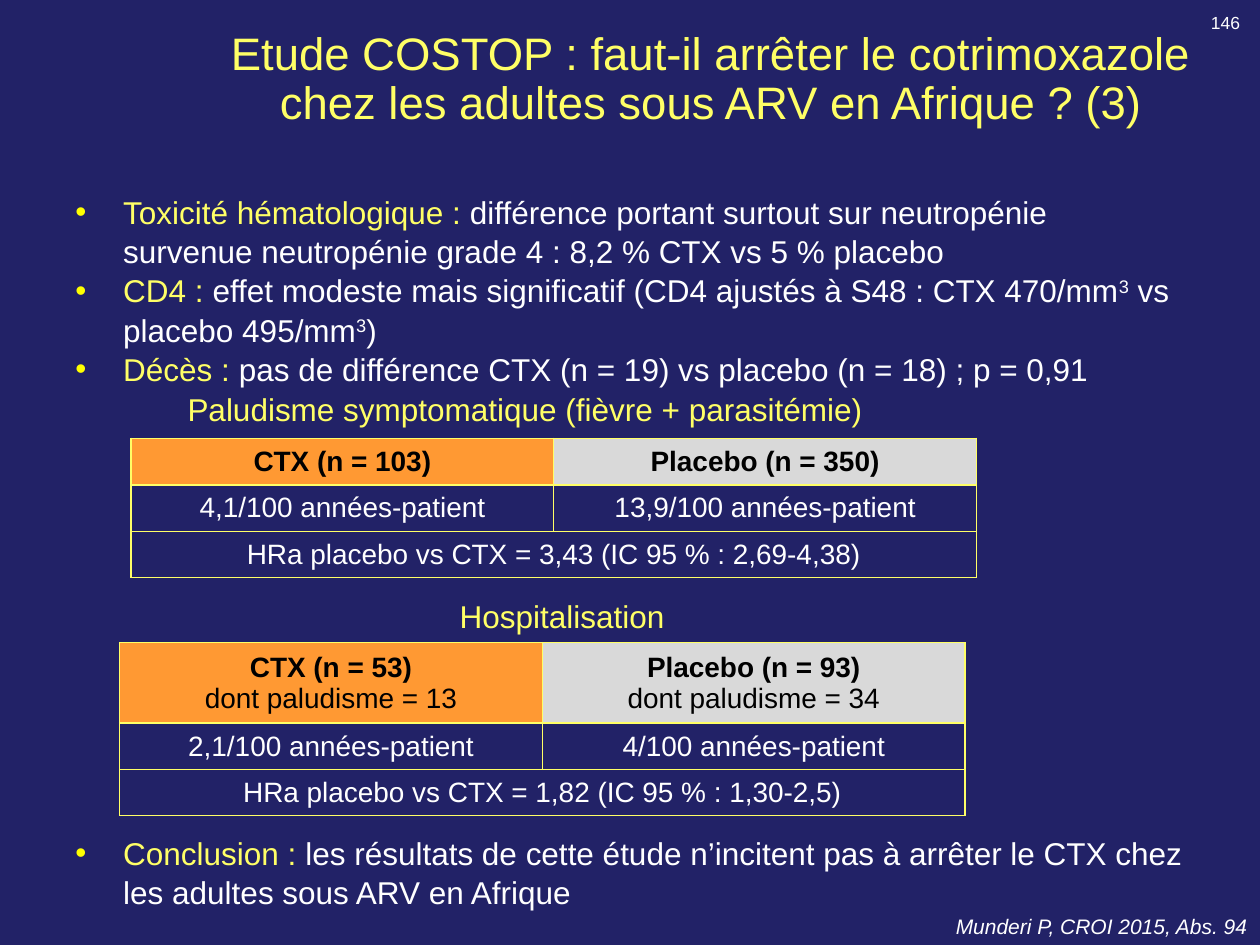
from dataclasses import dataclass

from lxml import etree
from pptx import Presentation
from pptx.dml.color import RGBColor
from pptx.enum.text import MSO_ANCHOR, PP_ALIGN
from pptx.oxml.ns import qn
from pptx.util import Inches, Pt

LEFT, CENTER, RIGHT = PP_ALIGN.LEFT, PP_ALIGN.CENTER, PP_ALIGN.RIGHT
TOP, MIDDLE = MSO_ANCHOR.TOP, MSO_ANCHOR.MIDDLE


@dataclass(frozen=True)
class Theme:
    font: str = "Arial"
    background: str = "222267"
    accent: str = "FFFF66"
    bullet: str = "FFFF00"
    text: str = "FFFFFF"
    dark: str = "000000"
    ctx: str = "FF9933"
    placebo: str = "D9D9D9"
    title: int = 26
    body: int = 18
    cell: int = 16
    source: int = 12
    number: int = 10


THEME = Theme()


@dataclass(frozen=True)
class Span:
    text: str
    color: str = THEME.text
    size: int = THEME.body
    bold: bool = False
    italic: bool = False
    superscript: bool = False


@dataclass(frozen=True)
class Label:
    box: tuple
    span: Span
    align: PP_ALIGN = LEFT
    wrap: bool = True


@dataclass(frozen=True)
class BulletList:
    box: tuple
    items: list


@dataclass(frozen=True)
class Outcome:
    left: float
    top: float
    heads: list
    rates: list
    ratio: str
    head_height: float


def heading(text: str) -> Span:
    return Span(text, THEME.accent)


BULLETS = [
    BulletList((0.5, 1.47, 9.3, 1.6), [
        [heading("Toxicité hématologique : "),
         Span("différence portant surtout sur neutropénie \n"
              "survenue neutropénie grade 4 : 8,2 % CTX vs 5 % placebo")],
        [heading("CD4 : "),
         Span("effet modeste mais significatif (CD4 ajustés à S48 : CTX 470/mm"),
         Span("3", superscript=True), Span(" vs placebo 495/mm"),
         Span("3", superscript=True), Span(")")],
        [heading("Décès : "),
         Span("pas de différence CTX (n = 19) vs placebo (n = 18) ; p = 0,91")],
    ]),
    BulletList((0.5, 6.56, 9.26, 0.77), [
        [heading("Conclusion : "),
         Span("les résultats de cette étude n’incitent pas à arrêter le CTX "
              "chez les adultes sous ARV en Afrique")],
    ]),
]

OUTCOMES = [
    Outcome(1.04, 3.48, [["CTX (n = 103)"], ["Placebo (n = 350)"]],
            ["4,1/100 années-patient", "13,9/100 années-patient"],
            "HRa placebo vs CTX = 3,43 (IC 95 % : 2,69-4,38)", 0.37),
    Outcome(0.95, 5.1, [["CTX (n = 53)", "dont paludisme = 13"],
                        ["Placebo (n = 93)", "dont paludisme = 34"]],
            ["2,1/100 années-patient", "4/100 années-patient"],
            "HRa placebo vs CTX = 1,82 (IC 95 % : 1,30-2,5)", 0.64),
]

LABELS = [
    Label((6.46, 7.2, 3.54, 0.3),
          Span("Munderi P, CROI 2015, Abs. 94", size=THEME.source, italic=True), RIGHT),
    Label((1.39, 3.05, 5.66, 0.4),
          heading("Paludisme symptomatique (fièvre + parasitémie)")),
    Label((3.55, 4.69, 1.84, 0.4), heading("Hospitalisation"), wrap=False),
    Label((9.51, 0.05, 0.43, 0.27), Span("146", size=THEME.number), RIGHT, False),
]


def set_all(obj, formats: dict) -> None:
    for name, value in formats.items():
        setattr(obj, name, value)


def add_span(p, span: Span) -> None:
    for i, line in enumerate(span.text.split("\n")):
        if i:
            p.add_line_break()
        r = p.add_run()
        r.text = line
        set_all(r.font, {"name": THEME.font, "size": Pt(span.size),
                         "bold": span.bold, "italic": span.italic})
        r.font.color.rgb = RGBColor.from_string(span.color)
        if span.superscript:
            r.font._element.set("baseline", "30000")


def fill_text(tf, paragraphs: list, align: PP_ALIGN, spacing: float = 1.0) -> None:
    for i, spans in enumerate(paragraphs):
        p = tf.add_paragraph() if i else tf.paragraphs[0]
        set_all(p, {"alignment": align, "line_spacing": spacing,
                    "space_before": Pt(0), "space_after": Pt(0)})
        for span in spans:
            add_span(p, span)


def add_text(s, box: tuple, paragraphs: list, align: PP_ALIGN = LEFT,
             wrap: bool = True, spacing: float = 1.0):
    tf = s.shapes.add_textbox(*map(Inches, box)).text_frame
    set_all(tf, {"word_wrap": wrap, "vertical_anchor": TOP})
    fill_text(tf, paragraphs, align, spacing)
    return tf


def add_bullets(s, bullets: BulletList) -> None:
    tf = add_text(s, bullets.box, bullets.items, spacing=1.04)
    indent = Inches(0.38)
    for p in tf.paragraphs:
        pPr = p._p.get_or_add_pPr()
        pPr.set("marL", str(indent))
        pPr.set("indent", str(-indent))
        color = etree.SubElement(pPr, qn("a:buClr"))
        etree.SubElement(color, qn("a:srgbClr"), val=THEME.bullet)
        etree.SubElement(pPr, qn("a:buFont"), typeface=THEME.font)
        etree.SubElement(pPr, qn("a:buChar"), char="•")


def format_cell(cell, lines: list, fill: str = "") -> None:
    tcPr = cell._tc.get_or_add_tcPr()
    for side in ("lnL", "lnR", "lnT", "lnB"):
        ln = etree.SubElement(tcPr, qn(f"a:{side}"), w=str(Pt(1)))
        solid = etree.SubElement(ln, qn("a:solidFill"))
        etree.SubElement(solid, qn("a:srgbClr"), val=THEME.accent)
    if fill:
        cell.fill.solid()
        cell.fill.fore_color.rgb = RGBColor.from_string(fill)
    else:
        cell.fill.background()
    cell.vertical_anchor = MIDDLE
    color = THEME.dark if fill else THEME.text
    fill_text(cell.text_frame, [[Span(line, color, THEME.cell, bool(fill) and i == 0)]
                                for i, line in enumerate(lines)], CENTER)


def add_outcome(s, outcome: Outcome) -> None:
    heights = [outcome.head_height, 0.365, 0.365]
    box = (outcome.left, outcome.top, 6.71, sum(heights))
    table = s.shapes.add_table(3, 2, *map(Inches, box)).table
    set_all(table, {"first_row": False, "horz_banding": False})
    for row, height in zip(table.rows, heights):
        row.height = Inches(height)
    for col, fill in enumerate((THEME.ctx, THEME.placebo)):
        format_cell(table.cell(0, col), outcome.heads[col], fill)
        format_cell(table.cell(1, col), [outcome.rates[col]])
        format_cell(table.cell(2, col), [outcome.ratio] if col == 0 else [])
    table.cell(2, 0).merge(table.cell(2, 1))


def add_title(s, text: str) -> None:
    sp = s.shapes.title
    set_all(sp, {"left": Inches(1.53), "top": Inches(0.13),
                 "width": Inches(8.23), "height": Inches(1.02)})
    set_all(sp.text_frame, {"word_wrap": True, "vertical_anchor": MIDDLE})
    fill_text(sp.text_frame, [[Span(text, THEME.accent, THEME.title)]], CENTER, 0.9)
    rPr = sp.text_frame.paragraphs[0].runs[0].font._element
    effects = etree.Element(qn("a:effectLst"))
    shadow = etree.SubElement(effects, qn("a:outerShdw"), dist="38100", dir="2700000")
    etree.SubElement(shadow, qn("a:srgbClr"), val=THEME.dark)
    rPr.find(qn("a:solidFill")).addnext(effects)


def main() -> None:
    prs = Presentation()
    set_all(prs, {"slide_width": Inches(10), "slide_height": Inches(7.5)})
    s = prs.slides.add_slide(prs.slide_layouts[5])
    s.background.fill.solid()
    s.background.fill.fore_color.rgb = RGBColor.from_string(THEME.background)
    add_title(s, "Etude COSTOP : faut-il arrêter le cotrimoxazole "
                 "chez les adultes sous ARV en Afrique ? (3)")
    for bullets in BULLETS:
        add_bullets(s, bullets)
    for outcome in OUTCOMES:
        add_outcome(s, outcome)
    for label in LABELS:
        add_text(s, label.box, [[label.span]], label.align, label.wrap)
    prs.save("out.pptx")


if __name__ == "__main__":
    main()
